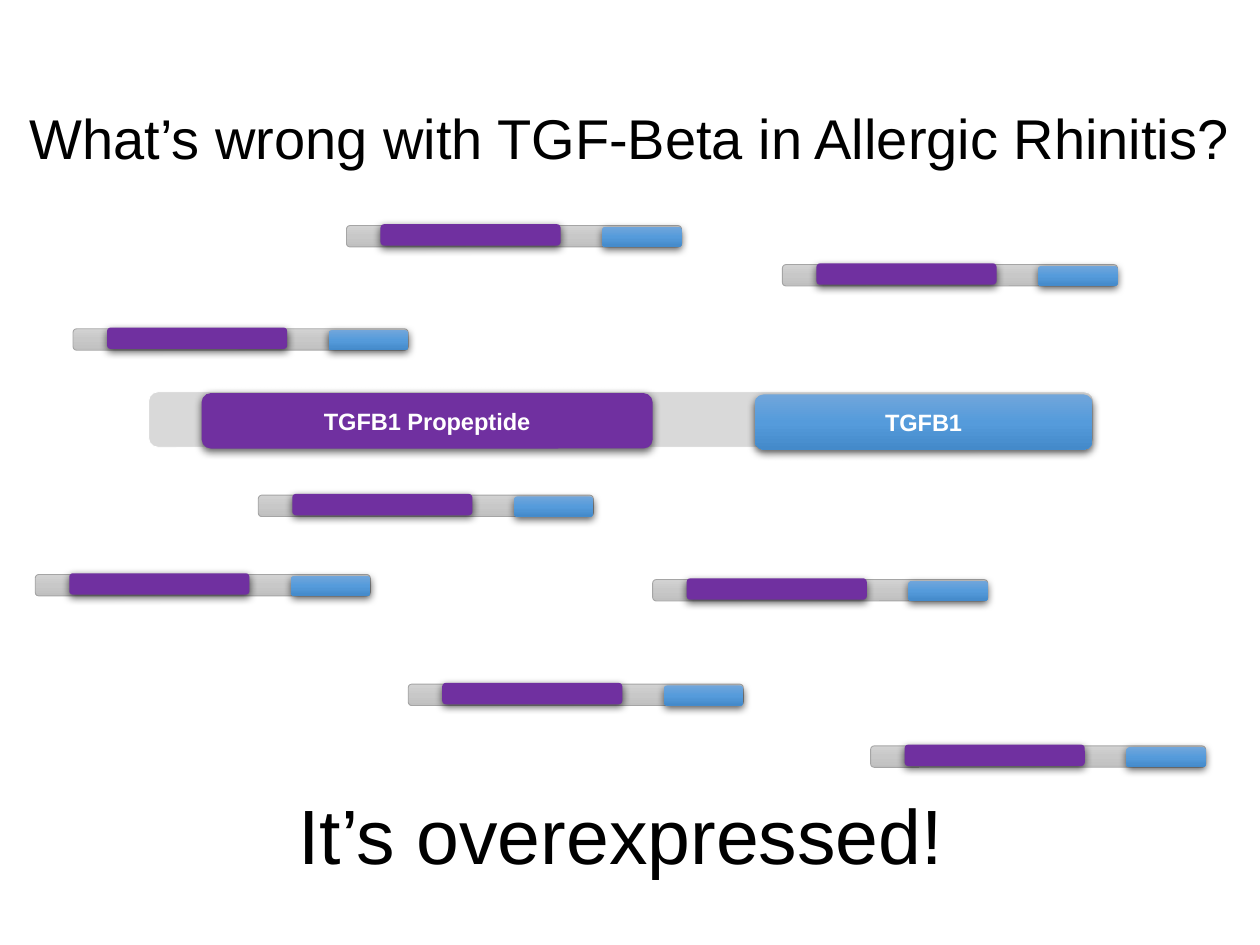
from copy import deepcopy

from lxml import etree
from pptx import Presentation
from pptx.dml.color import RGBColor
from pptx.enum.shapes import MSO_SHAPE
from pptx.enum.text import MSO_ANCHOR, MSO_AUTO_SIZE, PP_ALIGN
from pptx.oxml.ns import qn
from pptx.util import Inches, Pt

ROUND = MSO_SHAPE.ROUNDED_RECTANGLE
CENTER, MIDDLE = PP_ALIGN.CENTER, MSO_ANCHOR.MIDDLE
NO_FIT, GROW = MSO_AUTO_SIZE.NONE, MSO_AUTO_SIZE.SHAPE_TO_FIT_TEXT

BLACK = RGBColor(0x00, 0x00, 0x00)
WHITE = RGBColor(0xFF, 0xFF, 0xFF)
PURPLE = RGBColor(0x70, 0x30, 0xA0)
PALE = RGBColor(0xD9, 0xD9, 0xD9)
EDGE = RGBColor(0xA5, 0xA5, 0xA5)
GRAYS = [RGBColor(0xD2, 0xD2, 0xD2), RGBColor(0xC8, 0xC8, 0xC8), RGBColor(0xC0, 0xC0, 0xC0)]
BLUES = [RGBColor(0x71, 0xA6, 0xDB), RGBColor(0x55, 0x9B, 0xDB), RGBColor(0x44, 0x8A, 0xCA)]

# Left and top of each small protein
SPOTS = [(0.58, 2.61), (6.21, 2.1), (2.05, 3.93), (0.28, 4.56),
         (3.24, 5.43), (5.18, 4.6), (6.91, 5.92), (2.75, 1.79)]


class Page:
    font = "Arial"

    def __init__(self, deck):
        self.slide = deck.slides.add_slide(deck.slide_layouts[5])

    def run(self, para, text, size, color, bold=False):
        run = para.add_run()
        run.text = text
        font = run.font
        font.name, font.size, font.bold = self.font, Pt(size), bold
        font.color.rgb = color

    def title(self, text, x, y, w, h, size):
        box = self.slide.shapes.title
        box.left, box.top, box.width, box.height = map(Inches, (x, y, w, h))
        frame = box.text_frame
        frame.auto_size, frame.vertical_anchor = NO_FIT, MIDDLE
        para = frame.paragraphs[0]
        para.alignment, para.line_spacing = CENTER, 0.9
        self.run(para, text, size, BLACK)

    def text(self, text, x, y, w, h, size):
        box = self.slide.shapes.add_textbox(*map(Inches, (x, y, w, h)))
        frame = box.text_frame
        frame.word_wrap, frame.auto_size = True, GROW
        self.run(frame.paragraphs[0], text, size, BLACK)

    def blend(self, shape, colors):
        """Fill from top to bottom with three evenly spaced colours."""
        fill = shape.fill
        fill.gradient()
        fill.gradient_angle = 270
        stops = shape._element.spPr.find(".//" + qn("a:gsLst"))
        stops.insert(1, deepcopy(stops[0]))
        for i, (stop, color) in enumerate(zip(fill.gradient_stops, colors)):
            stop.position = i / 2
            stop.color.rgb = color

    def shade(self, shape):
        """Cast a soft shadow straight down."""
        effects = shape._element.spPr.find(qn("a:effectLst"))
        outer = etree.SubElement(effects, qn("a:outerShdw"), blurRad=str(Pt(4.5)),
                                 dist=str(Pt(1.5)), dir="5400000", rotWithShape="0")
        color = etree.SubElement(outer, qn("a:srgbClr"), val=str(BLACK))
        etree.SubElement(color, qn("a:alpha"), val="63000")

    def bar(self, x, y, w, h, fill, line=None, label=None):
        """Draw a rounded bar; one without an outline gets a shadow."""
        shape = self.slide.shapes.add_shape(ROUND, *map(Inches, (x, y, w, h)))
        if isinstance(fill, list):
            self.blend(shape, fill)
        else:
            shape.fill.solid()
            shape.fill.fore_color.rgb = fill
        shape.shadow.inherit = False
        if line is None:
            shape.line.fill.background()
            self.shade(shape)
        else:
            shape.line.color.rgb = line
            shape.line.width = Pt(0.5)
        if label:
            frame = shape.text_frame
            frame.margin_left = frame.margin_right = Inches(0.07)
            frame.margin_top = frame.margin_bottom = Inches(0.04)
            frame.vertical_anchor = MIDDLE
            para = frame.paragraphs[0]
            para.alignment = CENTER
            self.run(para, label, 13.5, WHITE, True)

    def protein(self, x, y):
        self.bar(x, y, 2.66, 0.17, GRAYS, EDGE)
        self.bar(x + 0.27, y - 0.01, 1.43, 0.17, PURPLE)
        self.bar(x + 2.03, y + 0.01, 0.63, 0.16, BLUES)


def main():
    deck = Presentation()
    deck.slide_width, deck.slide_height = Inches(10), Inches(7.5)
    page = Page(deck)
    page.title("What’s wrong with TGF-Beta in Allergic Rhinitis?", 0, 0.4, 10, 1.45, 32)
    page.text("It’s overexpressed!", 2.27, 6.2, 5.46, 0.84, 44)
    page.bar(1.18, 3.11, 7.5, 0.44, PALE, WHITE)
    page.bar(1.6, 3.12, 3.58, 0.44, PURPLE, label="TGFB1 Propeptide")
    page.bar(5.99, 3.13, 2.68, 0.44, BLUES, label="TGFB1")
    for x, y in SPOTS:
        page.protein(x, y)
    deck.save("out.pptx")


if __name__ == "__main__":
    main()
